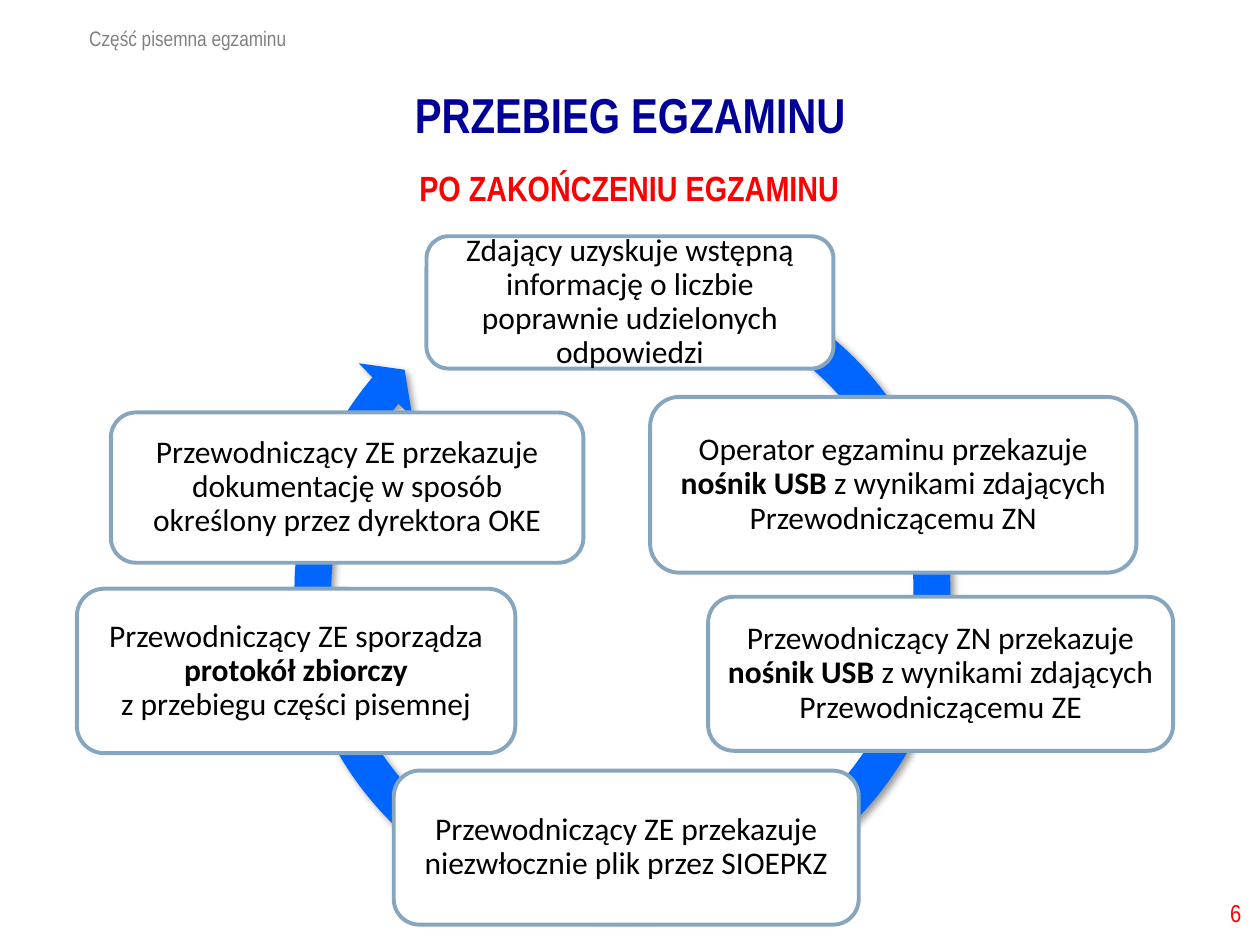
import pptx
import pptx.util
import pptx.dml.color
import pptx.enum.shapes
import pptx.enum.text
import pptx.oxml
from dataclasses import dataclass

Inches, Pt = pptx.util.Inches, pptx.util.Pt
Shape = pptx.enum.shapes.MSO_SHAPE
Align = pptx.enum.text.PP_ALIGN
Anchor = pptx.enum.text.MSO_ANCHOR


@dataclass(frozen=True)
class Theme:
    heading_font: str = "Arial Narrow"
    step_font: str = "Calibri"
    navy: str = "000099"
    red: str = "FF0000"
    gray: str = "808080"
    black: str = "000000"
    white: str = "FFFFFF"
    ring: str = "0066FF"
    border: str = "86A5BE"
    title_size: int = 28
    subtitle_size: int = 20
    step_size: int = 18
    number_size: int = 14
    section_size: int = 12
    line_spacing: float = 0.9


THEME = Theme()
WIDTH, HEIGHT = 10, 7.5

# Content: ** switches bold on and off
SECTION = "Część pisemna egzaminu"
TITLE = "PRZEBIEG EGZAMINU"
SUBTITLE = "PO ZAKOŃCZENIU EGZAMINU"
PAGE_NUMBER = "6"

# Steps clockwise from the top: text, centre and size as shares of the slide
STEPS = [
    ("Zdający uzyskuje wstępną informację o liczbie poprawnie udzielonych odpowiedzi",
     (0.5, 0.32), (0.323, 0.14)),
    ("Operator egzaminu przekazuje **nośnik USB **z wynikami zdających Przewodniczącemu ZN",
     (0.709, 0.513), (0.386, 0.186)),
    ("Przewodniczący ZN przekazuje **nośnik USB **z wynikami zdających Przewodniczącemu ZE",
     (0.7465, 0.713), (0.369, 0.163)),
    ("Przewodniczący ZE przekazuje niezwłocznie plik przez SIOEPKZ",
     (0.497, 0.897), (0.369, 0.163)),
    ("Przewodniczący ZE sporządza **protokół zbiorczy\n**z przebiegu części pisemnej",
     (0.235, 0.71), (0.348, 0.174)),
    ("Przewodniczący ZE przekazuje dokumentację w sposób określony przez dyrektora OKE",
     (0.2755, 0.516), (0.375, 0.159)),
]

# Ring: centre and diameter in inches, then thickness, head and arc angles
RING_CENTER, RING_DIAMETER = (4.94, 4.68), 5.52
RING_ADJUSTMENTS = (0.053, 3.126, 132.038, 177.566, 0.055)
RING_SHADOW = (
    '<a:effectLst xmlns:a="http://schemas.openxmlformats.org/drawingml/2006/main">'
    '<a:outerShdw blurRad="50800" dist="38100" dir="2700000" algn="tl" rotWithShape="0">'
    '<a:srgbClr val="000000"><a:alpha val="40000"/></a:srgbClr>'
    '</a:outerShdw></a:effectLst>')


def rgb(value):
    return pptx.dml.color.RGBColor.from_string(value)


def style_text(frame, font, size, color, align, anchor=Anchor.MIDDLE, spacing=None):
    frame.word_wrap = True
    frame.vertical_anchor = anchor
    for paragraph in frame.paragraphs:
        paragraph.alignment = align
        paragraph.line_spacing = spacing
        for run in paragraph.runs:
            run.font.name, run.font.size = font, Pt(size)
            run.font.color.rgb = rgb(color)


def add_label(slide, text, area, size, color, align, **options):
    label = slide.shapes.add_textbox(*map(Inches, area))
    label.text_frame.text = text
    style_text(label.text_frame, THEME.heading_font, size, color, align, **options)
    return label


def add_ring(slide):
    left, top = (middle - RING_DIAMETER / 2 for middle in RING_CENTER)
    ring = slide.shapes.add_shape(Shape.CIRCULAR_ARROW, Inches(left), Inches(top),
                                  Inches(RING_DIAMETER), Inches(RING_DIAMETER))
    for index, value in enumerate(RING_ADJUSTMENTS):
        ring.adjustments[index] = value
    ring.fill.solid()
    ring.fill.fore_color.rgb = rgb(THEME.ring)
    ring.line.fill.background()
    ring._element.spPr.append(pptx.oxml.parse_xml(RING_SHADOW))


def add_step(slide, text, center, size):
    width, height = size[0] * WIDTH, size[1] * HEIGHT
    left, top = center[0] * WIDTH - width / 2, center[1] * HEIGHT - height / 2
    step = slide.shapes.add_shape(Shape.ROUNDED_RECTANGLE,
                                  *map(Inches, (left, top, width, height)))
    step.shadow.inherit = False
    step.fill.solid()
    step.fill.fore_color.rgb = rgb(THEME.white)
    step.line.color.rgb = rgb(THEME.border)
    step.line.width = Pt(2.25)

    frame = step.text_frame
    frame.margin_left = frame.margin_right = Inches(0.08)
    frame.margin_top = frame.margin_bottom = Inches(0.08)
    paragraph = frame.paragraphs[0]
    for index, part in enumerate(text.split("**")):
        run = paragraph.add_run()
        run.text = part.rstrip("\n")
        run.font.bold = index % 2 == 1
        if part.endswith("\n"):
            paragraph.add_line_break()
    style_text(frame, THEME.step_font, THEME.step_size, THEME.black, Align.CENTER,
               spacing=THEME.line_spacing)


def main():
    deck = pptx.Presentation()
    deck.slide_width, deck.slide_height = Inches(WIDTH), Inches(HEIGHT)
    slide = deck.slides.add_slide(deck.slide_layouts.get_by_name("Title Only"))

    # Ring behind everything else
    add_ring(slide)

    # Headings and page number
    title = slide.shapes.title
    title.left, title.top, title.width, title.height = map(Inches, (0.69, 0.63, 8.62, 0.6))
    title.text_frame.text = TITLE
    style_text(title.text_frame, THEME.heading_font, THEME.title_size, THEME.navy,
               Align.CENTER, spacing=THEME.line_spacing)
    subtitle = add_label(slide, SUBTITLE, (2.38, 1.21, 5.23, 0.6), THEME.subtitle_size,
                         THEME.red, Align.CENTER, spacing=THEME.line_spacing)
    for heading in (title, subtitle):
        heading.text_frame.paragraphs[0].runs[0].font.bold = True
    add_label(slide, SECTION, (0.61, 0.15, 2.67, 0.3), THEME.section_size,
              THEME.gray, Align.LEFT, anchor=Anchor.TOP)
    add_label(slide, PAGE_NUMBER, (7.7, 7.04, 2.25, 0.4), THEME.number_size,
              THEME.red, Align.RIGHT)

    # Steps around the ring
    for text, center, size in STEPS:
        add_step(slide, text, center, size)

    deck.save("out.pptx")


if __name__ == "__main__":
    main()
